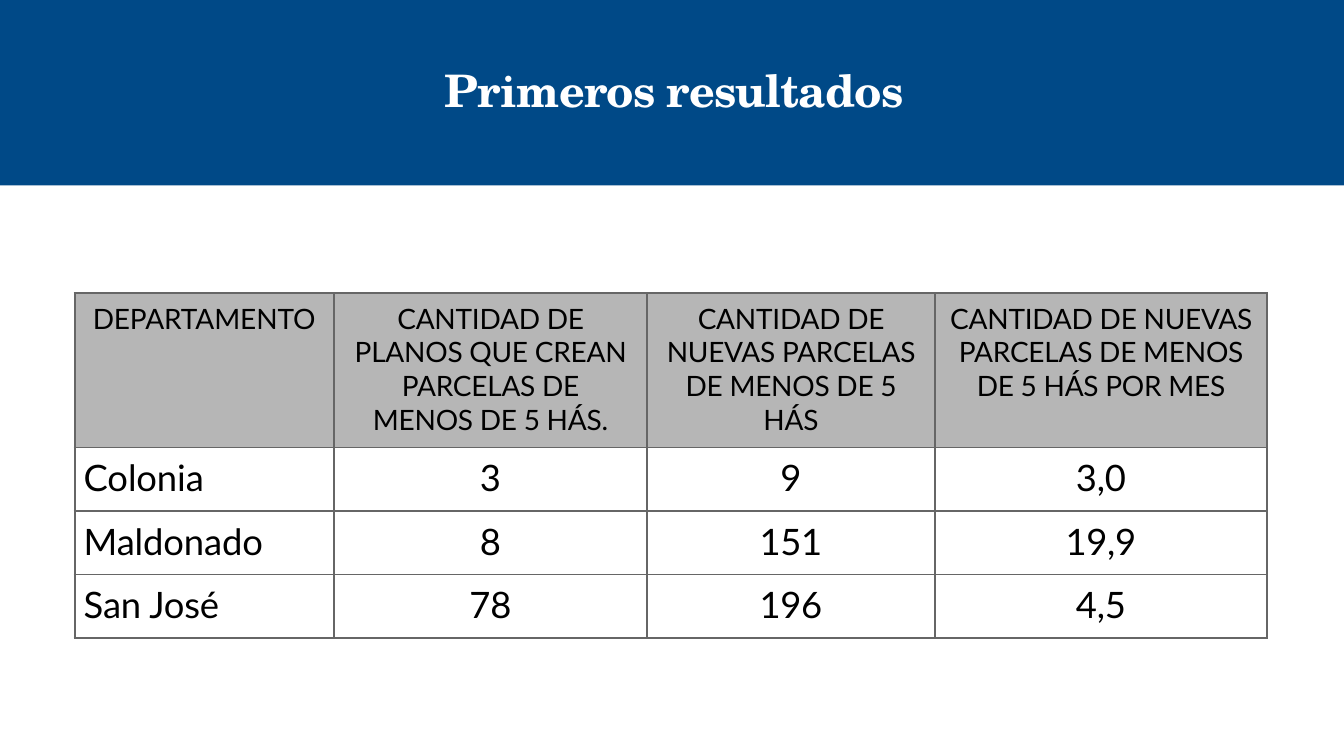
from lxml import etree
from pptx import Presentation
from pptx.dml.color import RGBColor
from pptx.enum.shapes import MSO_SHAPE
from pptx.enum.text import MSO_ANCHOR, MSO_AUTO_SIZE, PP_ALIGN
from pptx.oxml.ns import qn
from pptx.util import Inches, Pt

RECTANGLE = MSO_SHAPE.RECTANGLE
TOP = MSO_ANCHOR.TOP
NO_AUTOFIT = MSO_AUTO_SIZE.NONE
LEFT, CENTER = PP_ALIGN.LEFT, PP_ALIGN.CENTER

BLUE = RGBColor(0x00, 0x49, 0x87)
WHITE = RGBColor(0xFF, 0xFF, 0xFF)
BLACK = RGBColor(0x00, 0x00, 0x00)
HEADER_GRAY = RGBColor(0xB6, 0xB6, 0xB6)
BORDER_GRAY = RGBColor(0x66, 0x66, 0x66)

GRID_COLUMNS, GRID_ROWS = 1333, 750
CELL = Inches(13.33) // GRID_COLUMNS
TITLE_FONT, TABLE_FONT = "TeX Gyre Schola", "Lato"

COLUMN_WIDTHS = (257, 311, 285, 330)
ROW_HEIGHTS = (153, 63, 63, 63)
HEADER_MARGINS = (18, 15, 10, 15)
BODY_MARGINS = (9, 0, 0, 0)
RESULTS = (
    ("DEPARTAMENTO",
     "CANTIDAD DE PLANOS QUE CREAN PARCELAS DE MENOS DE 5 HÁS.",
     "CANTIDAD DE NUEVAS PARCELAS DE MENOS DE 5 HÁS",
     "CANTIDAD DE NUEVAS PARCELAS DE MENOS DE 5 HÁS POR MES"),
    ("Colonia", "3", "9", "3,0"),
    ("Maldonado", "8", "151", "19,9"),
    ("San José", "78", "196", "4,5"),
)


def write_text(frame, text, *, font, size, color, bold=False, align=LEFT, spacing=0):
    """Write one formatted paragraph, with letter spacing in points."""
    paragraph = frame.paragraphs[0]
    paragraph.alignment = align
    run = paragraph.add_run()
    run.text = text
    run.font.name = font
    run.font.size = Pt(size)
    run.font.bold = bold
    run.font.color.rgb = color
    run.font._element.set("spc", str(round(spacing * 100)))


def set_borders(cell, color, width):
    """Draw a solid line on all four sides of a table cell."""
    properties = cell._tc.get_or_add_tcPr()
    for index, side in enumerate(("lnL", "lnR", "lnT", "lnB")):
        line = etree.Element(qn(f"a:{side}"), w=str(Pt(width)))
        fill = etree.SubElement(line, qn("a:solidFill"))
        etree.SubElement(fill, qn("a:srgbClr"), val=str(color))
        properties.insert(index, line)


def add_title_band(slide, left, top, width, height):
    """Fill the band and set the title placeholder over it."""
    band = slide.shapes.add_shape(
        RECTANGLE, left * CELL, top * CELL, width * CELL, height * CELL)
    band.shadow.inherit = False
    band.fill.solid()
    band.fill.fore_color.rgb = BLUE
    band.line.fill.background()

    title = slide.shapes.title
    slide.shapes._spTree.append(title._element)
    title.left, title.top = (left + 376) * CELL, (top + 61) * CELL
    title.width, title.height = 582 * CELL, 56 * CELL
    frame = title.text_frame
    frame.auto_size = NO_AUTOFIT
    frame.word_wrap = True
    frame.vertical_anchor = TOP
    frame.margin_left, frame.margin_top = 65 * CELL, CELL
    frame.margin_right = frame.margin_bottom = 0
    write_text(frame, "Primeros resultados", font=TITLE_FONT, size=32,
               color=WHITE, bold=True, spacing=-0.6)


def add_results_table(slide, left, top, width, height):
    """Place the results table with a gray header row."""
    table = slide.shapes.add_table(
        len(ROW_HEIGHTS), len(COLUMN_WIDTHS),
        left * CELL, top * CELL, width * CELL, height * CELL).table
    table.first_row = table.horz_banding = False
    for column, column_width in zip(table.columns, COLUMN_WIDTHS):
        column.width = column_width * CELL
    for row, row_height in zip(table.rows, ROW_HEIGHTS):
        row.height = row_height * CELL

    for row_index, values in enumerate(RESULTS):
        is_header = row_index == 0
        margins = HEADER_MARGINS if is_header else BODY_MARGINS
        for column_index, value in enumerate(values):
            cell = table.cell(row_index, column_index)
            is_label = column_index == 0
            cell.margin_left = margins[column_index] * CELL
            cell.margin_right = 0 if is_label else cell.margin_left
            cell.margin_top, cell.margin_bottom = 8 * CELL, 0
            cell.vertical_anchor = TOP
            cell.fill.solid()
            cell.fill.fore_color.rgb = HEADER_GRAY if is_header else WHITE
            set_borders(cell, BORDER_GRAY, 1.5)
            write_text(cell.text_frame, value, font=TABLE_FONT,
                       size=20 if is_header else 26, color=BLACK,
                       align=LEFT if is_label else CENTER,
                       spacing=-0.1 if is_label else -0.2)


def main():
    """Build and save the slide."""
    presentation = Presentation()
    presentation.slide_width = GRID_COLUMNS * CELL
    presentation.slide_height = GRID_ROWS * CELL
    slide = presentation.slides.add_slide(presentation.slide_layouts[5])
    add_title_band(slide, 0, 0, GRID_COLUMNS, 184)
    add_results_table(slide, 74, 291, sum(COLUMN_WIDTHS), sum(ROW_HEIGHTS))
    presentation.save("out.pptx")


if __name__ == "__main__":
    main()
